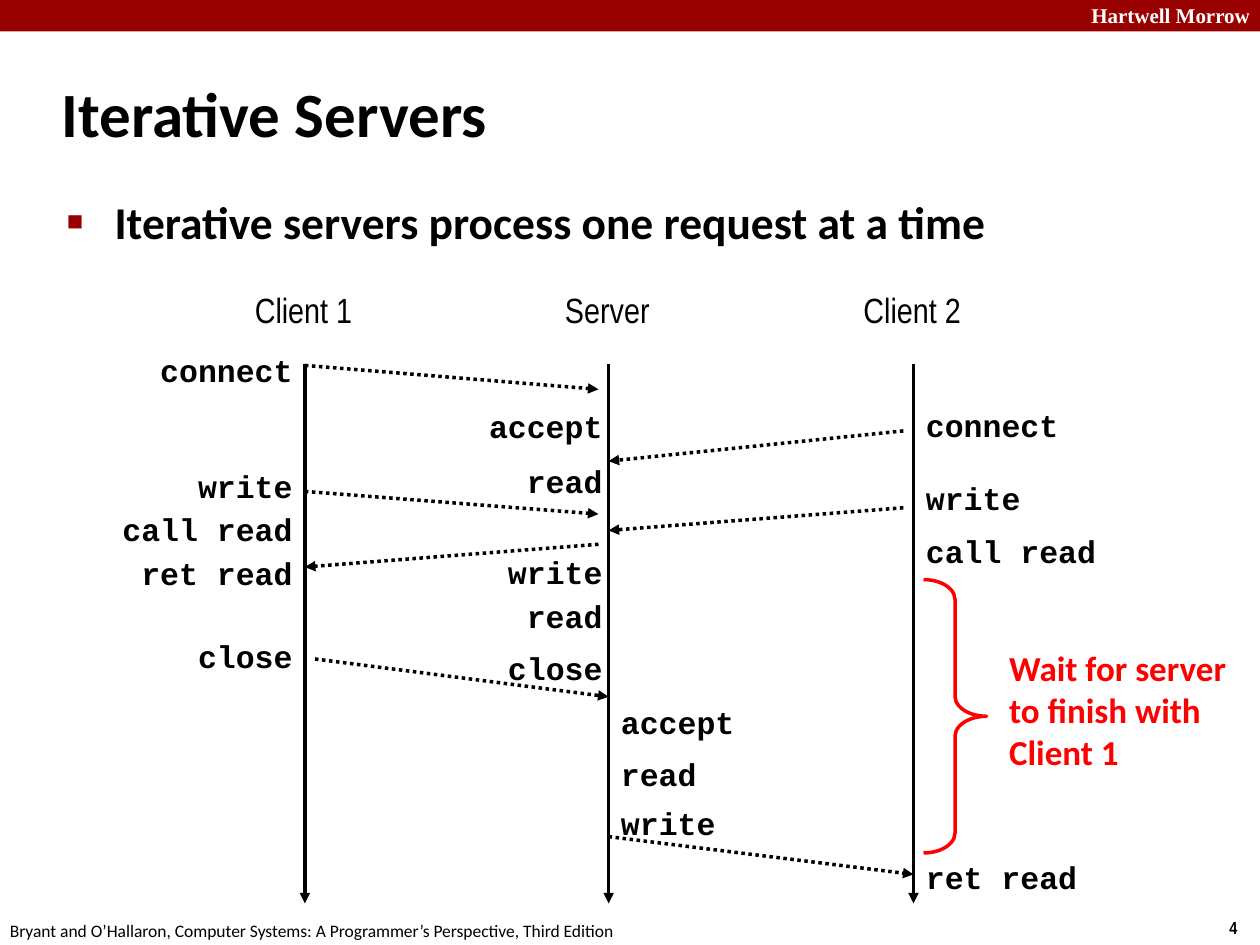
from lxml.etree import SubElement
from pptx import Presentation
from pptx.dml.color import RGBColor
from pptx.enum.dml import MSO_LINE_DASH_STYLE as Dash
from pptx.enum.shapes import MSO_CONNECTOR as Conn, MSO_SHAPE as Shape
from pptx.enum.text import MSO_ANCHOR as Anchor, MSO_AUTO_SIZE as AutoSize, PP_ALIGN as Align
from pptx.oxml.ns import qn
from pptx.util import Inches, Pt

BLACK, WHITE, CRIMSON, RED = "000000", "FFFFFF", "990000", "FF0000"
LANES = {"Client 1": 1.56, "Server": 3.97, "Client 2": 6.39}
LABELS = [
    ("Client 1", Align.RIGHT, 0, [("connect", 0.5), ("write", 1.42), ("call read", 1.76),
                                  ("ret read", 2.11), ("close", 2.77)]),
    ("Server", Align.RIGHT, 0.05, [("accept", 0.94), ("read", 1.38), ("write", 2.1),
                                   ("read", 2.45), ("close", 2.86)]),
    ("Server", Align.LEFT, 0, [("accept", 3.29), ("read", 3.7), ("write", 4.09)]),
    ("Client 2", Align.LEFT, 0, [("connect", 0.93), ("write", 1.51), ("call read", 1.93),
                                 ("ret read", 4.52)]),
]
MESSAGES = [
    ("Client 1", 0, 0.66, "Server", -0.08, 0.85),
    ("Client 2", -0.08, 1.18, "Server", 0, 1.42),
    ("Client 1", 0, 1.66, "Server", -0.08, 1.84),
    ("Client 2", -0.08, 1.79, "Server", 0, 1.97),
    ("Server", -0.08, 2.08, "Client 1", 0, 2.26),
    ("Client 1", 0.08, 2.99, "Server", 0, 3.29),
    ("Server", 0, 4.4, "Client 2", 0, 4.7),
]


def rgb(value):
    """Turn a hex string into a colour."""
    return RGBColor.from_string(value)


def set_text(sp, text, font, size, color=BLACK, bold=False, align=Align.LEFT):
    """Write one formatted paragraph into a shape and return it."""
    sp.text_frame.text = text
    p = sp.text_frame.paragraphs[0]
    p.alignment = align
    f = p.runs[0].font
    f.name, f.size, f.bold = font, Pt(size), bold
    f.color.rgb = rgb(color)
    return p


def place(sp, box):
    """Move a shape to a box given in inches."""
    sp.left, sp.top, sp.width, sp.height = (Inches(v) for v in box)


def add_text(s, box, text, font, size, wrap=False, **style):
    """Add a text box."""
    sp = s.shapes.add_textbox(*(Inches(v) for v in box))
    sp.text_frame.word_wrap = wrap
    set_text(sp, text, font, size, **style)


def add_arrow(s, x1, y1, x2, y2, dash=None):
    """Add a black line with a triangle at its end."""
    line = s.shapes.add_connector(Conn.STRAIGHT, *(Inches(v) for v in (x1, y1, x2, y2)))
    line.line.width = Pt(2)
    line.line.color.rgb = rgb(BLACK)
    if dash:
        line.line.dash_style = dash
    SubElement(line.line._get_or_add_ln(), qn("a:tailEnd"), type="triangle")
    SubElement(line._element.spPr, qn("a:effectLst"))


def add_header(s, box):
    """Draw the top band with the school name at its right end."""
    x, y, w, h = box
    band = s.shapes.add_shape(Shape.RECTANGLE, *(Inches(v) for v in box))
    band.shadow.inherit = False
    band.fill.solid()
    band.fill.fore_color.rgb = rgb(CRIMSON)
    band.line.fill.background()
    add_text(s, (x + w - 1.46, y - 0.03, 1.48, 0.3), "Hartwell Morrow", "Times New Roman", 12,
             color=WHITE, bold=True, align=Align.RIGHT)


def add_footer(s, box):
    """Write the book reference and the page number."""
    x, y, w, h = box
    add_text(s, (x - 0.02, y + 0.02, 5.08, h),
             "Bryant and O’Hallaron, Computer Systems: A Programmer’s Perspective, Third Edition",
             "Calibri", 10)
    add_text(s, (x + w - 0.34, y, 0.34, h), "4", "Arial Narrow", 10, bold=True)


def add_title(s, box):
    """Fill the title placeholder."""
    sp = s.shapes.title
    place(sp, box)
    set_text(sp, "Iterative Servers", "Calibri", 36, bold=True)
    sp.text_frame.vertical_anchor = Anchor.MIDDLE
    sp.text_frame.auto_size = AutoSize.NONE


def add_body(s, box):
    """Fill the body placeholder with a square-bulleted line."""
    sp = s.placeholders[1]
    place(sp, box)
    p = set_text(sp, "Iterative servers process one request at a time", "Calibri", 26, bold=True)
    sp.text_frame.auto_size = AutoSize.NONE
    p.space_before = Pt(5)
    pPr = p._p.get_or_add_pPr()
    pPr.set("marL", str(Inches(0.38)))
    pPr.set("indent", str(-Inches(0.38)))
    SubElement(SubElement(pPr, qn("a:buClr")), qn("a:srgbClr"), val=CRIMSON)
    SubElement(pPr, qn("a:buSzPct"), val="60000")
    SubElement(pPr, qn("a:buFont"), typeface="Arial")
    SubElement(pPr, qn("a:buChar"), char="■")


def add_wait_note(s, box):
    """Draw the brace and the remark on its right."""
    x, y, w, h = box
    brace = s.shapes.add_shape(Shape.RIGHT_BRACE, *(Inches(v) for v in (x, y, 0.5, h)))
    brace.shadow.inherit = False
    brace.adjustments[0] = 0.317
    brace.fill.background()
    brace.line.color.rgb = rgb(RED)
    brace.line.width = Pt(2)
    add_text(s, (x + 0.58, y + 0.48, w - 0.58, 1.11), "Wait for server to finish with Client 1",
             "Calibri", 20, wrap=True, color=RED, bold=True)


def add_sequence(s, box):
    """Draw the lifelines, their calls and the messages between them."""
    x, y, w, h = box
    for name, lane in LANES.items():
        add_text(s, (x + lane - 0.51, y, 1, 0.44), name, "Arial Narrow", 20, align=Align.CENTER)
        add_arrow(s, x + lane, y + 0.65, x + lane, y + h)
    for name, align, shift, calls in LABELS:
        for call, top in calls:
            width = 0.15 * len(call) + 0.2
            left = x + LANES[name] + shift - (width if align == Align.RIGHT else 0)
            add_text(s, (left, y + top, width, 0.4), call, "Courier New", 18, bold=True, align=align)
    for start, dx1, y1, end, dx2, y2 in MESSAGES:
        add_arrow(s, x + LANES[start] + dx1, y + y1, x + LANES[end] + dx2, y + y2,
                  Dash.ROUND_DOT)
    add_wait_note(s, (x + 6.47, y + 2.36, w - 6.47, 2.17))


def main():
    """Build and save the slide."""
    prs = Presentation()
    prs.slide_width, prs.slide_height = Inches(10), Inches(7.5)
    s = prs.slides.add_slide(prs.slide_layouts[1])
    add_header(s, (0, 0, 10, 0.25))
    add_footer(s, (0, 7.23, 10, 0.27))
    add_title(s, (0.39, 0.48, 8.3, 0.83))
    add_body(s, (0.43, 1.49, 8.64, 5.44))
    add_sequence(s, (0.86, 2.24, 9.14, 4.93))
    prs.save("out.pptx")


if __name__ == "__main__":
    main()
